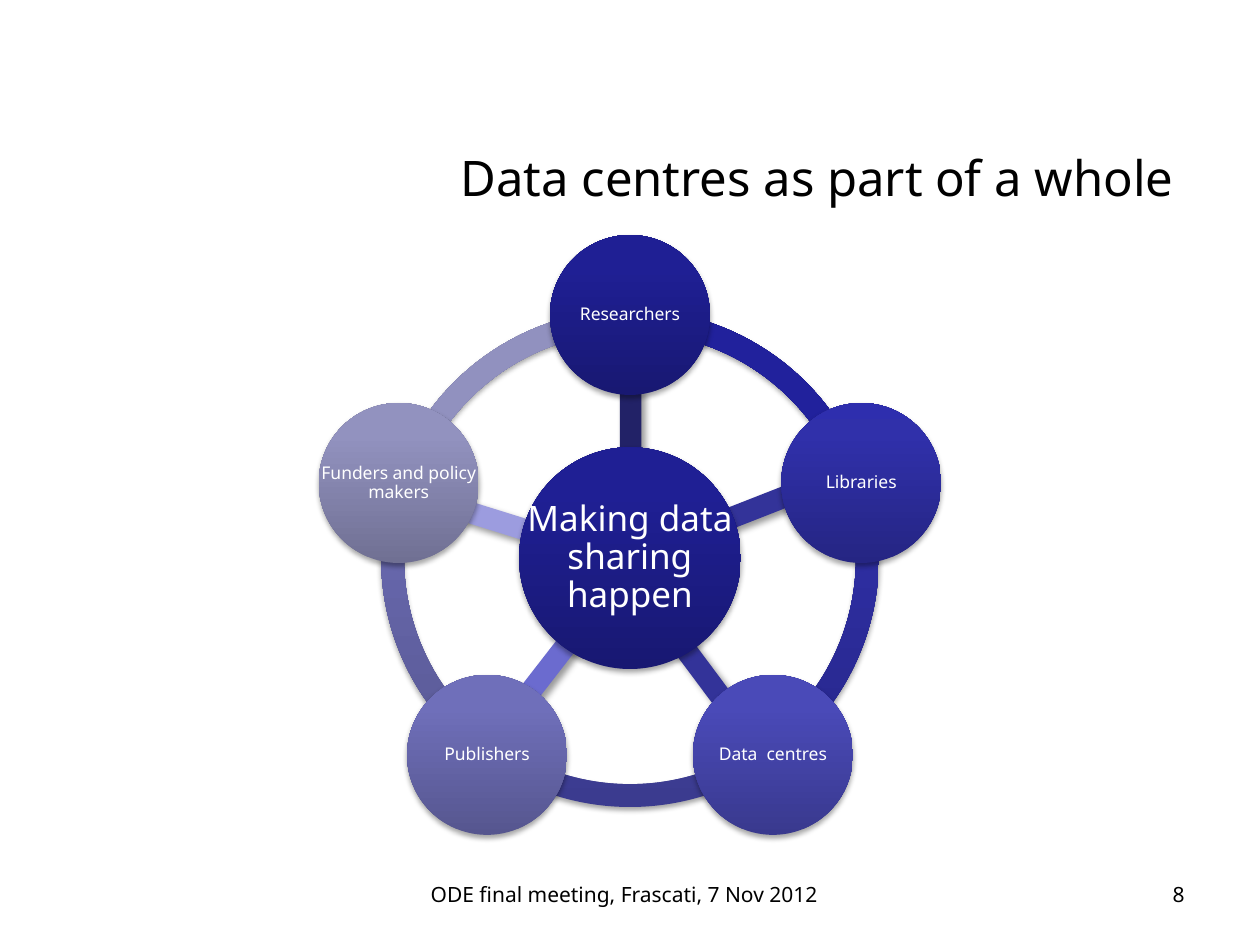
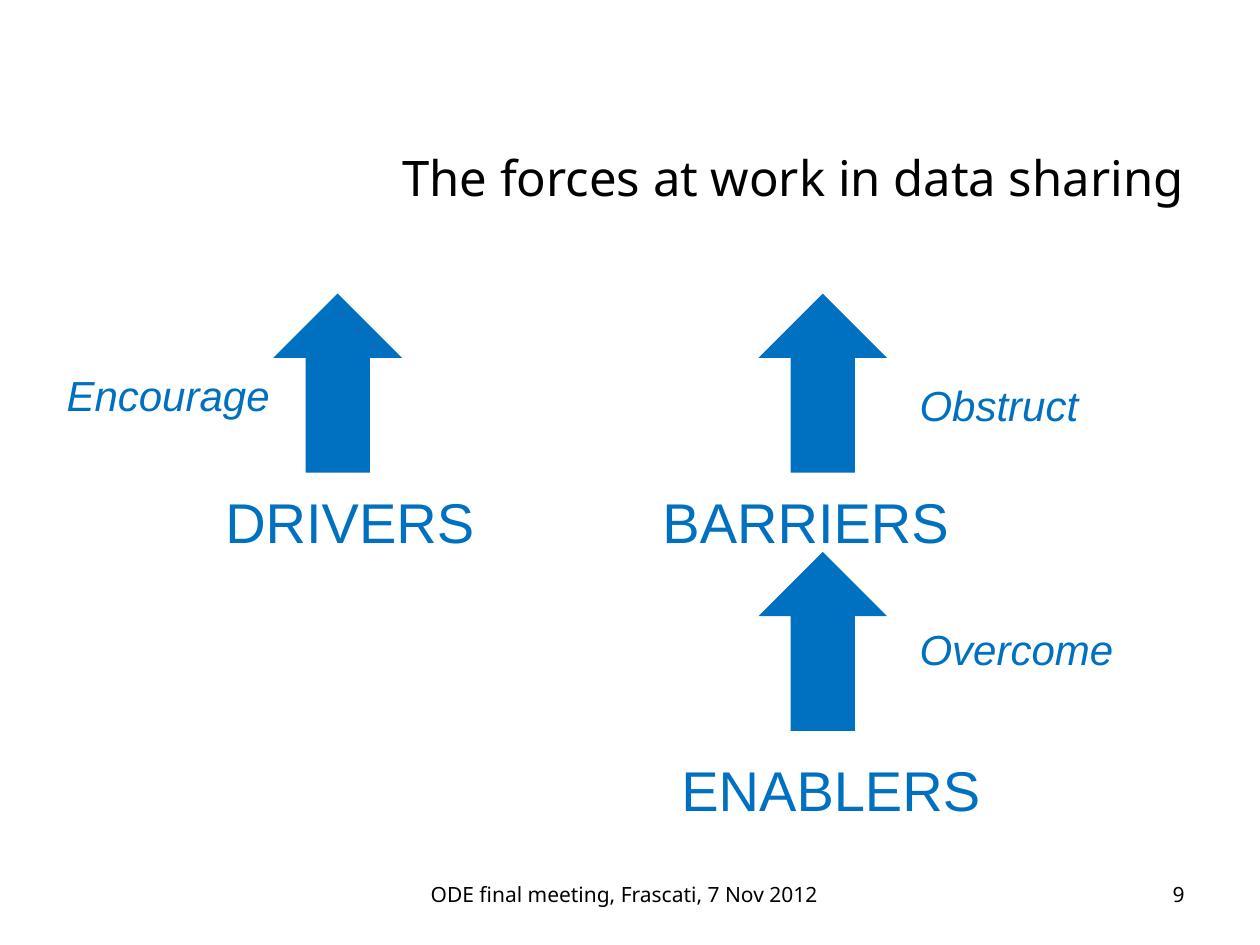
"""Builds two slides on data sharing: a wheel of stakeholders and the forces at work."""
from math import cos, radians, sin

from pptx import Presentation
from pptx.dml.color import RGBColor
from pptx.enum.shapes import MSO_SHAPE
from pptx.enum.text import MSO_ANCHOR, MSO_AUTO_SIZE, PP_ALIGN
from pptx.oxml import parse_xml
from pptx.oxml.ns import nsdecls, qn
from pptx.util import Emu, Inches, Pt

COLUMNS, ROWS = 100, 75
BLACK = RGBColor(0x00, 0x00, 0x00)
WHITE = RGBColor(0xFF, 0xFF, 0xFF)
BLUE = RGBColor(0x00, 0x70, 0xC0)
INDIGO = RGBColor(0x33, 0x33, 0x99)
MIDNIGHT = RGBColor(0x22, 0x22, 0x67)
VIOLET = RGBColor(0x6B, 0x6B, 0xCF)
LILAC = RGBColor(0x9C, 0x9C, 0xDF)
SPOKE_SHADOW = dict(alpha=40, blur=4, dist=3, angle=45)
SOFT_SHADOW = dict(alpha=35, blur=3.1, dist=1.8, angle=90)


def gradient(*codes):
    """Return the colours of a gradient, from the bottom up."""
    return [RGBColor.from_string(code) for code in codes]


HUB_FILL = gradient("181872", "1F1F94", "1D1D97")
STAKEHOLDERS = [
    ("Researchers", HUB_FILL, gradient("191978", "21219C", "1F1F9F")),
    ("Libraries", gradient("252583", "3030AA", "2E2EAE"),
     gradient("262687", "3232B0", "2F2FB3")),
    ("Data  centres", gradient("39398E", "4A4AB8", "4848BB"),
     gradient("3B3B8F", "4C4CBA", "4B4BBD")),
    ("Publishers", gradient("56568F", "6F6FBA", "6E6EBC"),
     gradient("565690", "7070BB", "6F6FBD")),
    ("Funders and policy makers", gradient("707093", "9292BF", "9191C0"),
     gradient("6F6F93", "9191BF", "9090C1")),
]
SPOKES = [
    (39.45, 41.35, 17.3, LILAC),
    (43.75, 52.75, 307.8, VIOLET),
    (55.75, 53.35, 53.3, INDIGO),
    (59.95, 40.35, 338.6, INDIGO),
    (50.05, 33.65, 90, MIDNIGHT),
]


def write(tf, text, size, color=BLACK, font="Noto Sans", align=PP_ALIGN.LEFT,
          anchor=MSO_ANCHOR.TOP, italic=False, spacing=None, inset=None):
    """Write one formatted paragraph into a text frame."""
    tf.word_wrap = True
    tf.vertical_anchor = anchor
    if inset is not None:
        tf.margin_left = tf.margin_top = tf.margin_right = tf.margin_bottom = Inches(inset)
    p = tf.paragraphs[0]
    p.alignment = align
    if spacing:
        p.line_spacing = spacing
    r = p.add_run()
    r.text = text
    r.font.name, r.font.size, r.font.italic = font, Pt(size), italic
    r.font.color.rgb = color


class Deck:
    """Holds the shared style and the current slide."""

    def __init__(self, first_number):
        """Start an empty deck whose pages count from first_number."""
        self.prs = Presentation()
        self.prs.slide_width, self.prs.slide_height = Inches(10), Inches(7.5)
        self.number = first_number
        self.s = None

    def box(self, left, top, width, height):
        """Turn grid columns and rows into lengths."""
        column, row = self.prs.slide_width / COLUMNS, self.prs.slide_height / ROWS
        return [Emu(round(n * unit)) for n, unit in
                ((left, column), (top, row), (width, column), (height, row))]

    def slide(self, title, title_width):
        """Add a slide with its title, footer and page number."""
        self.s = self.prs.slides.add_slide(self.prs.slide_layouts[5])
        sp = self.s.shapes.title
        sp.left, sp.top, sp.width, sp.height = self.box(26.4, 7.8, title_width, 12.5)
        write(sp.text_frame, title, 28, align=PP_ALIGN.RIGHT, anchor=MSO_ANCHOR.MIDDLE)
        self.text("ODE final meeting, Frascati, 7 Nov 2012", 27.3, 69.5, 44.5, 4,
                  size=12, align=PP_ALIGN.CENTER)
        self.text(str(self.number), 73.4, 69.5, 21.6, 4, size=12, align=PP_ALIGN.RIGHT)
        self.number += 1

    def text(self, text, left, top, width, height, grow=False, **style):
        """Add a text box."""
        tf = self.s.shapes.add_textbox(*self.box(left, top, width, height)).text_frame
        write(tf, text, **style)
        tf.auto_size = MSO_AUTO_SIZE.SHAPE_TO_FIT_TEXT if grow else MSO_AUTO_SIZE.NONE

    def shape(self, kind, left, top, width, height, fill, shadow=None):
        """Add an unlined shape with a solid or gradient fill."""
        sp = self.s.shapes.add_shape(kind, *self.box(left, top, width, height))
        if isinstance(fill, list):
            self.shade(sp, fill)
        else:
            sp.fill.solid()
            sp.fill.fore_color.rgb = fill
        sp.line.fill.background()
        sp.shadow.inherit = False
        if shadow:
            self.drop_shadow(sp, **shadow)
        return sp

    def shade(self, sp, colors):
        """Fill a shape with a vertical three-stop gradient."""
        stops = "".join(f'<a:gs pos="{pos}"><a:srgbClr val="{color}"/></a:gs>'
                        for pos, color in zip((0, 80000, 100000), colors))
        sp.element.spPr.find(qn("a:prstGeom")).addnext(parse_xml(
            f'<a:gradFill {nsdecls("a")} rotWithShape="1"><a:gsLst>{stops}</a:gsLst>'
            '<a:lin ang="16200000" scaled="0"/></a:gradFill>'))

    def drop_shadow(self, sp, alpha, blur, dist, angle):
        """Give a shape a black outer shadow."""
        sp.element.spPr.find(qn("a:effectLst")).append(parse_xml(
            f'<a:outerShdw {nsdecls("a")} blurRad="{Pt(blur)}" dist="{Pt(dist)}" '
            f'dir="{angle * 60000}" rotWithShape="0"><a:srgbClr val="{BLACK}">'
            f'<a:alpha val="{alpha * 1000}"/></a:srgbClr></a:outerShdw>'))

    def disc(self, text, x, y, diameter, fill, size, inset):
        """Add a labelled circle centred on x, y."""
        place = (x - diameter / 2, y - diameter / 2, diameter, diameter)
        self.shape(MSO_SHAPE.OVAL, *place, fill, SOFT_SHADOW)
        self.text(text, *place, size=size, color=WHITE, align=PP_ALIGN.CENTER,
                  anchor=MSO_ANCHOR.MIDDLE, spacing=0.9, inset=inset)

    def arc(self, x, y, diameter, start, end, fill):
        """Add a ring segment running clockwise between two angles."""
        sp = self.shape(MSO_SHAPE.BLOCK_ARC, x - diameter / 2, y - diameter / 2,
                        diameter, diameter, fill, SOFT_SHADOW)
        for i, value in enumerate((start % 360 * 0.6, end % 360 * 0.6, 0.046)):
            sp.adjustments[i] = value

    def spoke(self, x, y, angle, fill):
        """Add a turned bar centred on x, y."""
        sp = self.shape(MSO_SHAPE.RECTANGLE, x - 2.75, y - 0.85, 5.5, 1.7, fill, SPOKE_SHADOW)
        sp.rotation = angle


def add_wheel(deck):
    """Build the slide with the wheel of stakeholders."""
    deck.slide("Data centres as part of a whole", 67.7)
    x, y, radius, step = 50, 44.3, 19.3, 360 / len(STAKEHOLDERS)
    for spoke in SPOKES:
        deck.spoke(*spoke)
    angles = [i * step - 90 for i in range(len(STAKEHOLDERS))]
    for angle, (_, _, fill) in reversed(list(zip(angles, STAKEHOLDERS))):
        deck.arc(x, y, 39.5, angle, angle + step, fill)
    deck.disc("Making data sharing happen", x, y, 17.6, HUB_FILL, 20, 0.03)
    for angle, (name, fill, _) in zip(angles, STAKEHOLDERS):
        deck.disc(name, x + radius * cos(radians(angle)), y + radius * sin(radians(angle)),
                  12.7, fill, 10, 0.01)


def add_forces(deck):
    """Build the slide with drivers, barriers and enablers."""
    deck.slide("The forces at work in data sharing", 68.5)
    for force, left, top in (("DRIVERS", 16.9, 38.2), ("ENABLERS", 53.1, 59.5),
                             ("BARRIERS", 51.6, 38.2)):
        deck.text(force, left, top, 27.6, 6.4, grow=True, size=32, color=BLUE, font="Arial")
    for left, top in ((21.7, 23.3), (60.2, 23.3), (60.2, 43.8)):
        deck.shape(MSO_SHAPE.UP_ARROW, left, top, 10.2, 14.2, BLUE)
    for effect, left, top in (("Encourage", 4.3, 28.8), ("Obstruct", 72, 29.6),
                              ("Overcome", 72, 49)):
        deck.text(effect, left, top, 19.7, 5, grow=True, size=24, color=BLUE,
                  font="Arial", italic=True)


def main():
    """Build and save the deck."""
    deck = Deck(first_number=8)
    add_wheel(deck)
    add_forces(deck)
    deck.prs.save("out.pptx")


if __name__ == "__main__":
    main()
